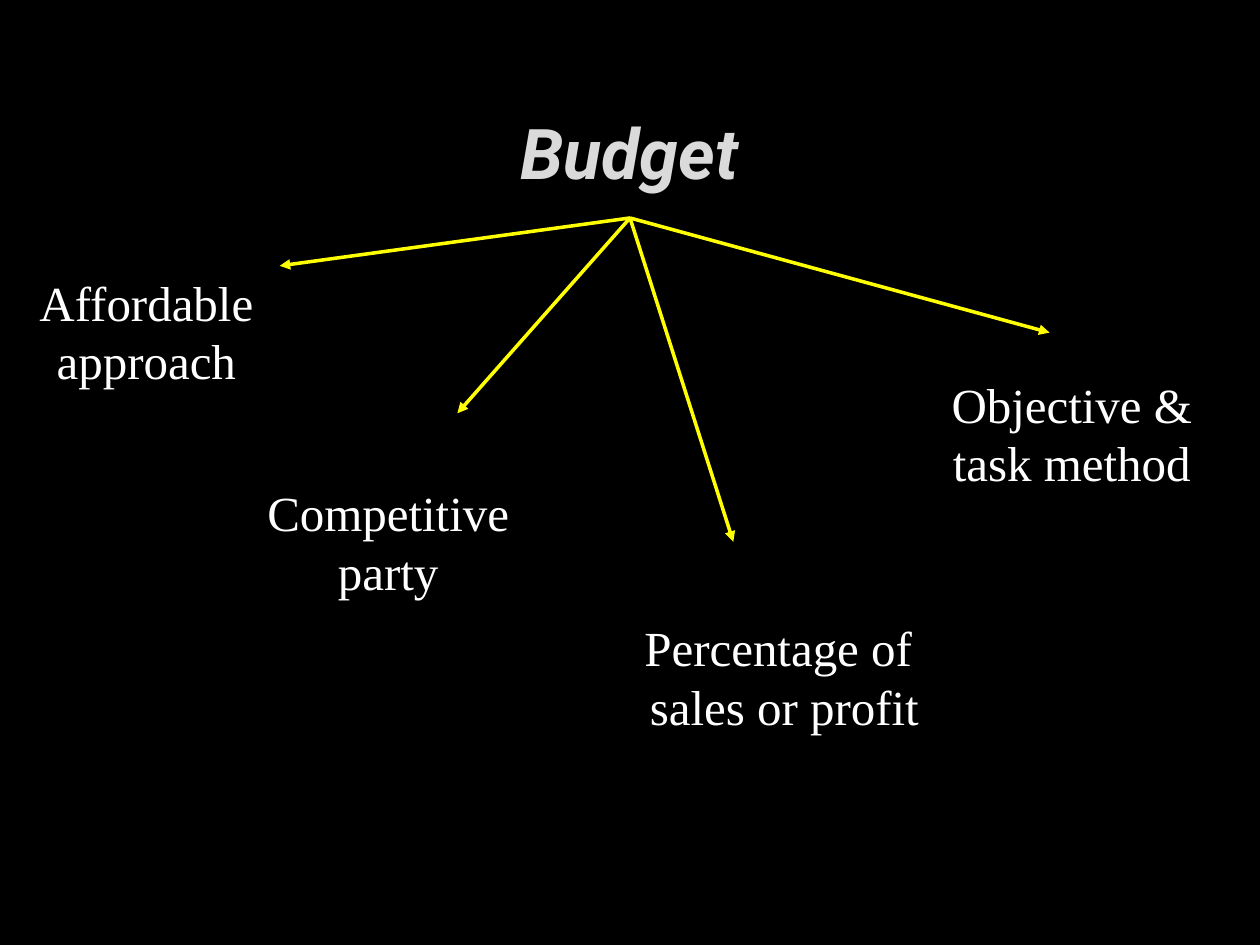
"""Build a slide that branches a budget into four setting methods."""
from lxml import etree
from pptx import Presentation
from pptx import util as u
from pptx.dml.color import RGBColor
from pptx.enum import shapes, text
from pptx.oxml import ns


def color(value):
    return RGBColor.from_string(value)


class Deck:
    background = "000000"
    arrow_color = "FFFF00"
    title_font = dict(name="Roboto", size=u.Pt(40), bold=True, italic=True)
    title_color = "DADADA"
    label_font = dict(name="Times New Roman", size=u.Pt(28), bold=False)
    label_color = "FFFFFF"

    def __init__(self, prs):
        self.s = prs.slides.add_slide(prs.slide_layouts[5])
        fill = self.s.background.fill
        fill.solid()
        fill.fore_color.rgb = color(self.background)

    def add_lines(self, tf, lines, font, rgb):
        for i, line in enumerate(lines):
            p = tf.paragraphs[0] if i == 0 else tf.add_paragraph()
            p.alignment = text.PP_ALIGN.CENTER
            r = p.add_run()
            r.text = line
            for key, value in font.items():
                setattr(r.font, key, value)
            r.font.color.rgb = color(rgb)

    def title(self, line, left, top, width, height):
        sp = self.s.shapes.title
        box = dict(left=left, top=top, width=width, height=height)
        for key, value in box.items():
            setattr(sp, key, u.Inches(value))
        tf = sp.text_frame
        tf.vertical_anchor = text.MSO_ANCHOR.MIDDLE
        self.add_lines(tf, [line], self.title_font, self.title_color)

    def label(self, lines, left, top, width, height=1.04):
        box = map(u.Inches, (left, top, width, height))
        tf = self.s.shapes.add_textbox(*box).text_frame
        tf.word_wrap = False
        tf.auto_size = text.MSO_AUTO_SIZE.SHAPE_TO_FIT_TEXT
        self.add_lines(tf, lines, self.label_font, self.label_color)

    def arrow(self, start, end):
        ends = map(u.Inches, (*start, *end))
        sp = self.s.shapes.add_connector(shapes.MSO_CONNECTOR.STRAIGHT, *ends)
        sp.line.width = u.Pt(2)
        sp.line.color.rgb = color(self.arrow_color)
        props = sp._element.spPr
        ln = props.find(ns.qn("a:ln"))
        etree.SubElement(ln, ns.qn("a:tailEnd"), type="triangle")
        etree.SubElement(props, ns.qn("a:effectLst"))


def main():
    prs = Presentation()
    prs.slide_width, prs.slide_height = u.Inches(10), u.Inches(7.5)
    deck = Deck(prs)
    deck.title("Budget", 0.75, 0.67, 8.49, 1.06)

    methods = [
        (["Affordable ", "approach "], (0.2, 2.11, 2.02), (2.22, 2.11)),
        (["Competitive ", "party "], (2.01, 3.78, 2.24), (3.63, 3.28)),
        (["Percentage of ", "sales or profit"], (5, 4.85, 2.45), (5.82, 4.3)),
        (["Objective & ", "task method "], (7.44, 2.92, 2.23), (8.33, 2.64)),
    ]
    for lines, box, tip in methods:
        deck.label(lines, *box)
        deck.arrow((5, 1.73), tip)
    prs.save("out.pptx")


if __name__ == "__main__":
    main()
